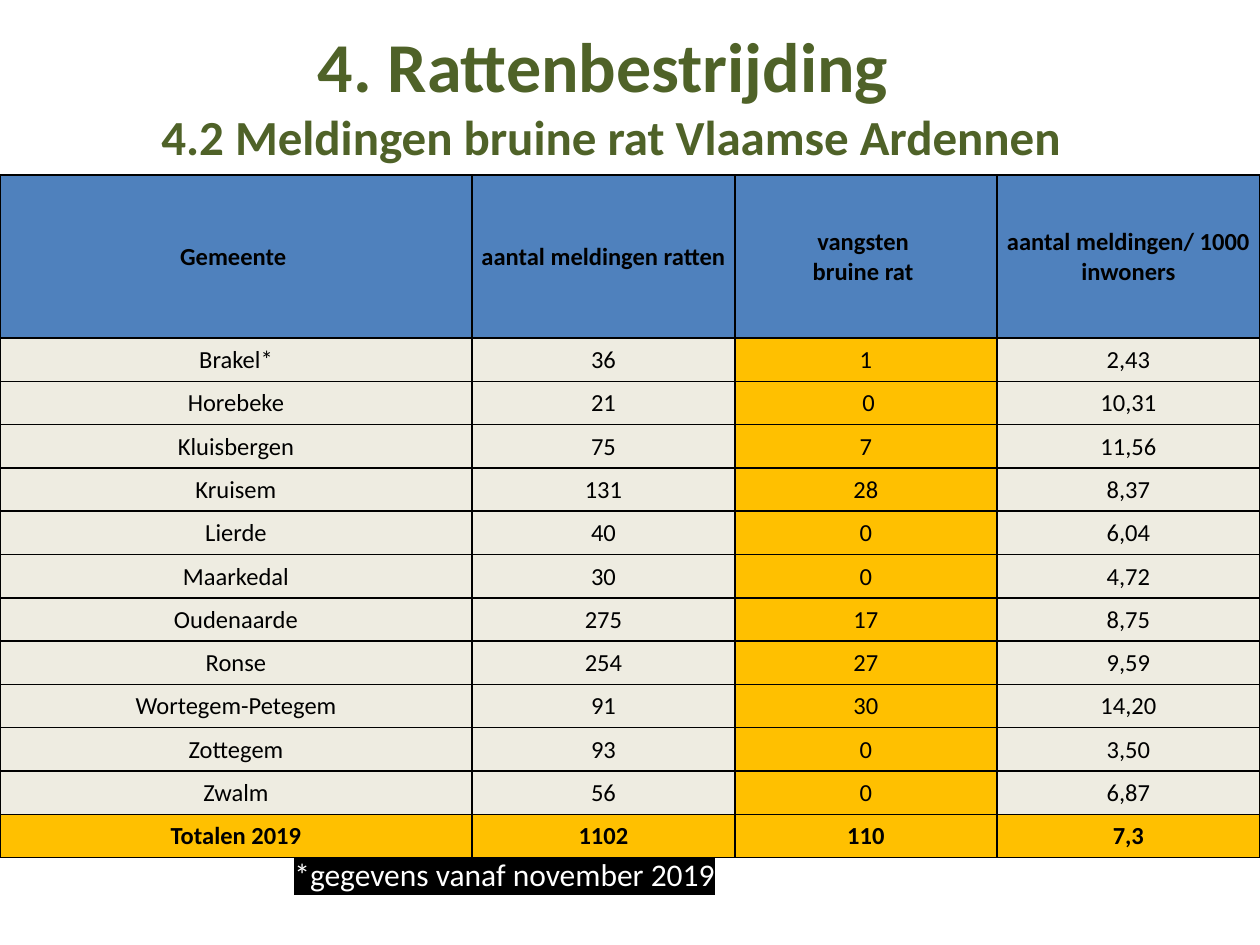
"""Build the slide with brown rat reports per municipality in the Vlaamse Ardennen."""
from dataclasses import dataclass

import pptx
import pptx.dml.color
import pptx.enum.text
import pptx.oxml
import pptx.oxml.ns
import pptx.util


@dataclass
class Theme:
    font: str = "Calibri"
    title: str = "4F6228"
    header: str = "4F81BD"
    body: str = "EEECE1"
    accent: str = "FFC000"
    black: str = "000000"
    white: str = "FFFFFF"
    title_size: int = 40
    subtitle_size: int = 28
    note_size: int = 18
    table_size: int = 14
    border: int = 1


def px(length):
    return pptx.util.Emu(round(length * 914400 / 126))


def style(para, size, color, bold=False):
    for span in para.runs:
        span.font.name = theme.font
        span.font.size = pptx.util.Pt(size)
        span.font.bold = bold
        span.font.color.rgb = pptx.dml.color.RGBColor.from_string(color)


theme = Theme()
namespace = pptx.oxml.ns.nsdecls("a")
anchors = pptx.enum.text.MSO_ANCHOR
center = pptx.enum.text.PP_ALIGN.CENTER

deck = pptx.Presentation()
deck.slide_width, deck.slide_height = px(1260), px(945)
page = deck.slides.add_slide(deck.slide_layouts[5])

title = page.shapes.title
title.left, title.top, title.width, title.height = px(44), px(16), px(1134), px(683)
title.text_frame.text = "4. Rattenbestrijding \n4.2 Meldingen bruine rat Vlaamse Ardennen"
title.text_frame.vertical_anchor = anchors.TOP
title.text_frame.auto_size = pptx.enum.text.MSO_AUTO_SIZE.NONE
for para, size in zip(title.text_frame.paragraphs, (theme.title_size, theme.subtitle_size)):
    para.alignment = center
    style(para, size, theme.title, True)

rows = [
    ("Gemeente ", "aantal meldingen ratten", "vangsten \nbruine rat ", "aantal meldingen/ 1000 inwoners"),
    ("Brakel*", "36", "1", "2,43"),
    ("Horebeke", "21", " 0", "10,31"),
    ("Kluisbergen", "75", "7", "11,56"),
    ("Kruisem", "131", "28", "8,37"),
    ("Lierde", "40", "0", "6,04"),
    ("Maarkedal", "30", "0", "4,72"),
    ("Oudenaarde", "275", "17", "8,75"),
    ("Ronse", "254", "27", "9,59"),
    ("Wortegem-Petegem", "91", "30", "14,20"),
    ("Zottegem", "93", "0", "3,50"),
    ("Zwalm", "56", "0", "6,87"),
    ("Totalen 2019", "1102", "110", "7,3"),
]
last_row = len(rows) - 1
catches_column = 2
table = page.shapes.add_table(len(rows), 4, 0, px(175), px(1260), px(683)).table
table.first_row = table.horz_banding = False
for column, width in zip(table.columns, (472, 263, 262, 263)):
    column.width = px(width)
for row in table.rows:
    row.height = px(520) // last_row
table.rows[0].height = px(163)

for row_index, texts in enumerate(rows):
    for column_index, text in enumerate(texts):
        cell = table.cell(row_index, column_index)
        cell.text = text
        cell.vertical_anchor = anchors.MIDDLE
        cell.margin_left = cell.margin_right = cell.margin_top = px(1)
        cell.margin_bottom = 0
        for para in cell.text_frame.paragraphs:
            para.alignment = center
            style(para, theme.table_size, theme.black, row_index in (0, last_row))
        properties = cell._tc.get_or_add_tcPr()
        for side in ("lnL", "lnR", "lnT", "lnB"):
            properties.append(pptx.oxml.parse_xml(
                f'<a:{side} {namespace} w="{pptx.util.Pt(theme.border)}"><a:solidFill>'
                f'<a:srgbClr val="{theme.black}"/></a:solidFill></a:{side}>'))
        if row_index == 0:
            color = theme.header
        elif row_index == last_row or column_index == catches_column:
            color = theme.accent
        else:
            color = theme.body
        cell.fill.solid()
        cell.fill.fore_color.rgb = pptx.dml.color.RGBColor.from_string(color)

note = page.shapes.add_textbox(px(282), px(849), px(456), px(50))
note.text_frame.word_wrap = True
note.text_frame.auto_size = pptx.enum.text.MSO_AUTO_SIZE.SHAPE_TO_FIT_TEXT
note.text_frame.text = "*gegevens vanaf november 2019"
para = note.text_frame.paragraphs[0]
style(para, theme.note_size, theme.white)
text_fill = para.runs[0]._r.rPr.find(pptx.oxml.ns.qn("a:solidFill"))
text_fill.addnext(pptx.oxml.parse_xml(
    f'<a:highlight {namespace}><a:srgbClr val="{theme.black}"/></a:highlight>'))

deck.save("out.pptx")
